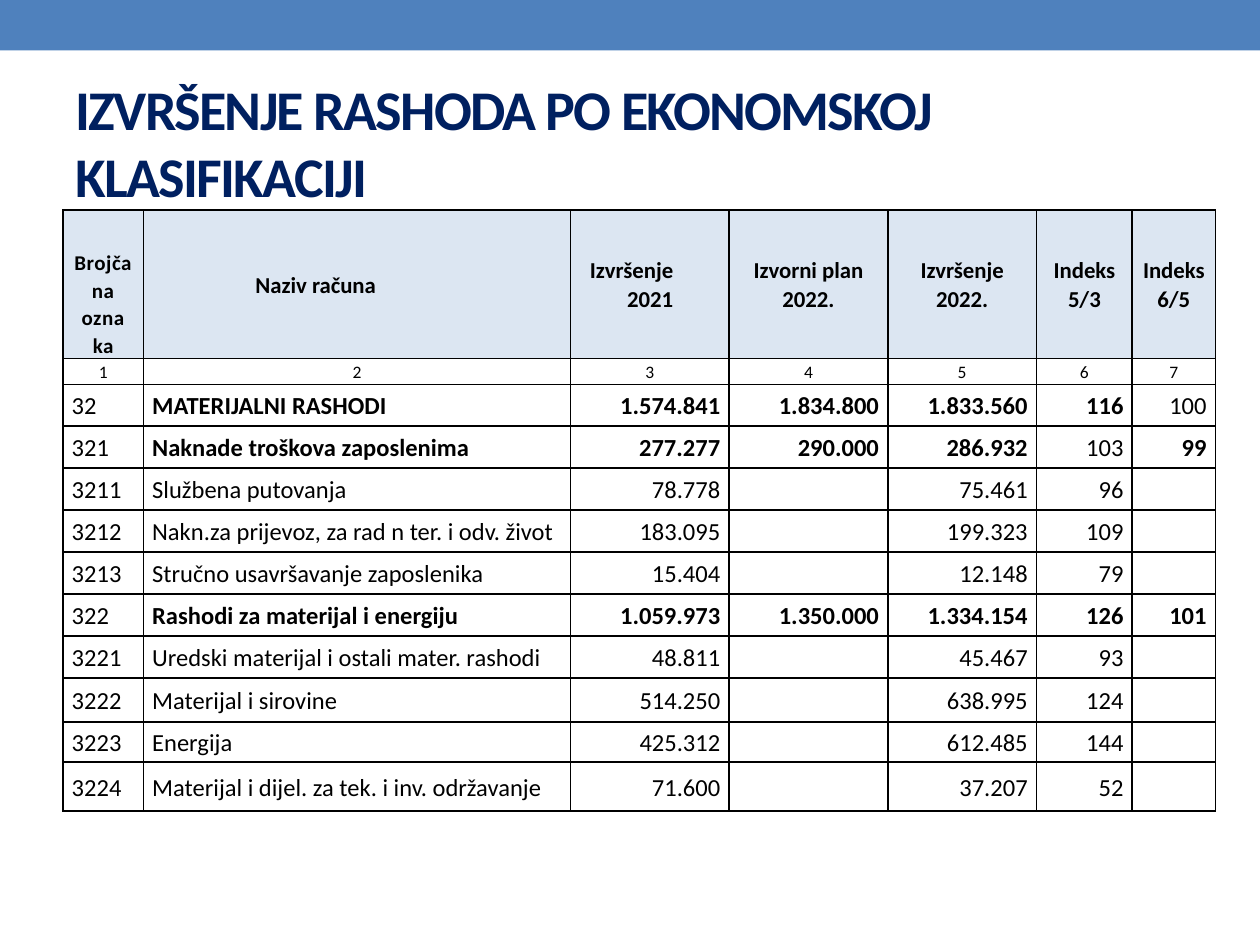
from pptx import Presentation
from pptx.dml.color import RGBColor
from pptx.enum.shapes import MSO_SHAPE
from pptx.enum.text import MSO_ANCHOR as Anchor, PP_ALIGN as Align
from pptx.util import Pt
from lxml.etree import SubElement
from pptx.oxml.ns import qn

COLORS = {"bar": "4F81BD", "title": "002060", "text": "000000",
          "border": "000000", "header": "DCE6F2", "body": "FFFFFF"}
COLUMN_WIDTHS = [46, 244, 90.7, 90.7, 85, 54.7, 47.5]
ROW_HEIGHTS = [85, 14.6] + [24] * 7 + [25.2, 22.9, 28]
HEADERS = ["Brojčana ozna ka", "Naziv računa", "Izvršenje 2021", "Izvorni plan 2022.",
           "Izvršenje 2022.", "Indeks 5/3", "Indeks 6/5"]
HEADER_STYLES = {
    0: {"size": 12, "spacing": 0.3, "anchor": Anchor.BOTTOM},
    1: {"align": Align.LEFT, "left": 64},
    2: {"align": Align.RIGHT, "right": 32},
}
ACCOUNTS = [
    ("32", "MATERIJALNI RASHODI", "1.574.841", "1.834.800", "1.833.560", "116", "100"),
    ("321", "Naknade troškova zaposlenima", "277.277", "290.000", "286.932", "103", "99"),
    ("3211", "Službena putovanja", "78.778", "", "75.461", "96", ""),
    ("3212", "Nakn.za prijevoz, za rad n ter. i odv. život", "183.095", "", "199.323", "109", ""),
    ("3213", "Stručno usavršavanje zaposlenika", "15.404", "", "12.148", "79", ""),
    ("322", "Rashodi za materijal i energiju", "1.059.973", "1.350.000", "1.334.154", "126", "101"),
    ("3221", "Uredski materijal i ostali mater. rashodi", "48.811", "", "45.467", "93", ""),
    ("3222", "Materijal i sirovine", "514.250", "", "638.995", "124", ""),
    ("3223", "Energija", "425.312", "", "612.485", "144", ""),
    ("3224", "Materijal i dijel. za tek. i inv. održavanje", "71.600", "", "37.207", "52", ""),
]
REGULAR_TOTALS = {("32", 6), ("321", 5)}


class SlideBuilder:
    """Holds the style and the current slide, and adds each kind of element."""

    def __init__(self, slide, font_name="Calibri"):
        self.slide = slide
        self.font_name = font_name

    def color(self, name):
        return RGBColor.from_string(COLORS[name])

    def run(self, paragraph, text, size, color="text", bold=False, spacing=0):
        run = paragraph.add_run()
        run.text = text
        run.font.name = self.font_name
        run.font.size = Pt(size)
        run.font.bold = bold
        run.font.color.rgb = self.color(color)
        if spacing:
            run.font._element.set("spc", str(round(spacing * 100)))

    def bar(self, left, top, width, height):
        shape = self.slide.shapes.add_shape(
            MSO_SHAPE.RECTANGLE, Pt(left), Pt(top), Pt(width), Pt(height))
        shape.shadow.inherit = False
        shape.fill.solid()
        shape.fill.fore_color.rgb = self.color("bar")
        shape.line.fill.background()

    def title(self, text, left, top, width, height):
        title = self.slide.shapes.title
        title.left, title.top, title.width, title.height = map(Pt, (left, top, width, height))
        frame = title.text_frame
        frame.word_wrap = True
        frame.vertical_anchor = Anchor.MIDDLE
        frame.margin_right = Pt(20)
        paragraph = frame.paragraphs[0]
        paragraph.alignment = Align.LEFT
        self.run(paragraph, text, 32, "title", True, -1)

    def table(self, left, top, widths, heights):
        table = self.slide.shapes.add_table(
            len(heights), len(widths), Pt(left), Pt(top),
            Pt(sum(widths)), Pt(sum(heights))).table
        table.first_row = table.horz_banding = False
        for column, width in zip(table.columns, widths):
            column.width = Pt(width)
        for row, height in zip(table.rows, heights):
            row.height = Pt(height)
        return table

    def borders(self, cell):
        properties = cell._tc.get_or_add_tcPr()
        for index, side in enumerate(("a:lnL", "a:lnR", "a:lnT", "a:lnB")):
            line = properties.makeelement(qn(side), {"w": str(Pt(1))})
            fill = SubElement(line, qn("a:solidFill"))
            SubElement(fill, qn("a:srgbClr"), val=COLORS["border"])
            properties.insert(index, line)

    def cell(self, cell, text, size, fill="body", bold=False, align=Align.CENTER,
             spacing=0, anchor=Anchor.MIDDLE, left=5, right=5):
        cell.fill.solid()
        cell.fill.fore_color.rgb = self.color(fill)
        self.borders(cell)
        cell.margin_left, cell.margin_right = Pt(left), Pt(right)
        cell.margin_top = cell.margin_bottom = 0
        cell.vertical_anchor = anchor
        paragraph = cell.text_frame.paragraphs[0]
        paragraph.alignment = align
        paragraph.line_spacing = 1.07
        if text:
            self.run(paragraph, text, size, bold=bold, spacing=spacing)


def main():
    presentation = Presentation()
    presentation.slide_width, presentation.slide_height = Pt(720), Pt(540)
    builder = SlideBuilder(presentation.slides.add_slide(presentation.slide_layouts[5]))
    builder.bar(0, 0, 720, 28.8)
    builder.title("IZVRŠENJE RASHODA PO EKONOMSKOJ KLASIFIKACIJI", 36, 42, 675, 78)
    table = builder.table(36, 120, COLUMN_WIDTHS, ROW_HEIGHTS)

    for column, header in enumerate(HEADERS):
        style = {"size": 13, "fill": "header", "bold": True, **HEADER_STYLES.get(column, {})}
        builder.cell(table.cell(0, column), header, **style)
        builder.cell(table.cell(1, column), str(column + 1), 10)

    for row, account in enumerate(ACCOUNTS, start=2):
        code = account[0]
        for column, text in enumerate(account):
            bold = len(code) < 4 and column > 0 and (code, column) not in REGULAR_TOTALS
            align = Align.LEFT if column < 2 else Align.RIGHT
            builder.cell(table.cell(row, column), text, 14, bold=bold, align=align)

    presentation.save("out.pptx")


if __name__ == "__main__":
    main()
